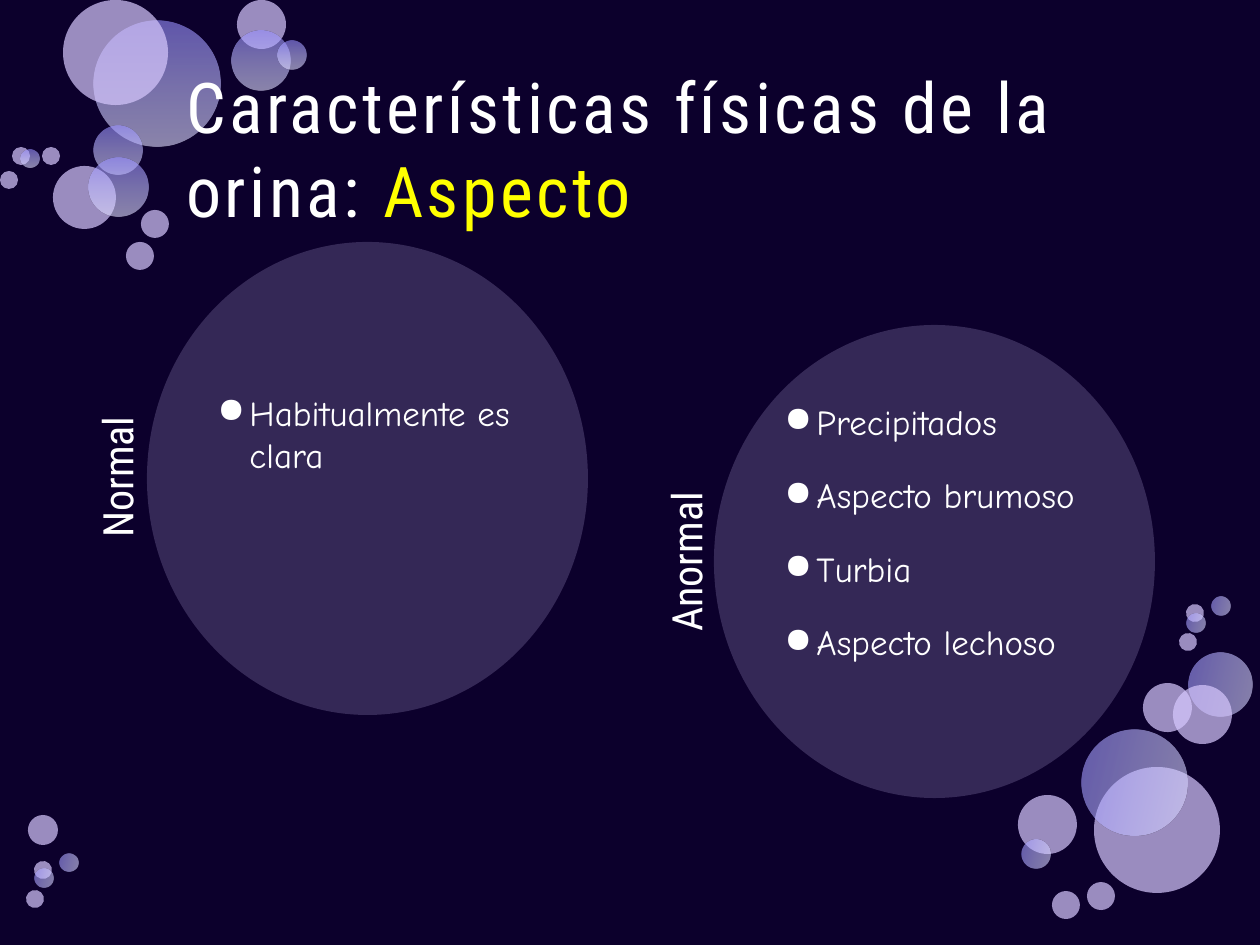
"""Build the slide on the physical aspect of urine, with bubbles in the corners."""
import lxml.etree
import pptx
import pptx.dml.color
import pptx.enum.shapes
import pptx.enum.text
import pptx.oxml.ns
import pptx.util

PX = pptx.util.Inches(1) / 126
COLORS = {
    "night": "0C002C",
    "lilac": "D7C8FE",
    "white": "FFFFFF",
    "yellow": "FFFF00",
}
GRADIENT = [(0, "9890FF"), (50, "BFBBFF"), (100, "E0DEFF")]
HEADING, BODY = "Roboto Condensed", "Comic Neue"
TOP_BUBBLES = [
    (94, 21, 126, True), (53, 166, 63, False), (94, 126, 49, True),
    (89, 158, 59, True), (63, 0, 105, False), (237, 0, 49, False),
    (231, 31, 59, True), (278, 41, 28, True), (141, 210, 28, False),
    (12, 147, 18, False), (126, 242, 28, False), (0, 171, 18, False),
    (21, 150, 18, True), (42, 147, 18, False),
]
BOTTOM_BUBBLES = [
    (1094, 767, 126, False), (1189, 653, 63, True), (1143, 683, 49, False),
    (1173, 685, 59, False), (1082, 730, 105, True), (28, 815, 30, False),
    (1018, 795, 59, False), (1022, 840, 28, True), (1052, 891, 28, False),
    (1186, 604, 18, False), (1087, 882, 28, False), (1212, 597, 18, True),
    (1187, 614, 18, True), (1179, 633, 18, False), (34, 861, 18, False),
    (60, 854, 18, True), (35, 869, 18, True), (26, 890, 18, False),
]


def emu(px):
    return round(px * PX)


def rgb(name):
    return pptx.dml.color.RGBColor.from_string(COLORS[name])


def add_child(parent, tag, **attrs):
    return lxml.etree.SubElement(parent, pptx.oxml.ns.qn(tag), attrs)


def add_alpha(color, percent):
    add_child(color, "a:alpha", val=str(percent * 1000))


def fill_gradient(sp):
    sp.fill.gradient()
    sp.fill.gradient_angle = 270
    stops = sp.element.spPr.find(".//" + pptx.oxml.ns.qn("a:gsLst"))
    for stop in list(stops):
        stops.remove(stop)
    for pos, color in GRADIENT:
        stop = add_child(stops, "a:gs", pos=str(pos * 1000))
        add_alpha(add_child(stop, "a:srgbClr", val=color), 60)


def fill_lilac(sp, percent):
    sp.fill.solid()
    sp.fill.fore_color.rgb = rgb("lilac")
    add_alpha(sp.element.spPr.find(".//" + pptx.oxml.ns.qn("a:srgbClr")), percent)


def add_ellipse(slide, x, y, w, h):
    oval = pptx.enum.shapes.MSO_SHAPE.OVAL
    sp = slide.shapes.add_shape(oval, emu(x), emu(y), emu(w), emu(h))
    sp.shadow.inherit = False
    sp.line.fill.background()
    return sp


def add_bubbles(slide, bubbles, turned):
    for x, y, size, shaded in bubbles:
        sp = add_ellipse(slide, x, y, size, size)
        if shaded:
            fill_gradient(sp)
        else:
            fill_lilac(sp, 70)
        if turned:
            sp.rotation = 103.3
            sp.element.spPr.xfrm.set("flipV", "1")


def add_run(p, text, font, size, color="white"):
    r = p.add_run()
    r.text = text
    r.font.name = font
    r.font.size = pptx.util.Pt(size)
    r.font.color.rgb = rgb(color)
    return r


def add_text_box(slide, x, y, w, h):
    sp = slide.shapes.add_textbox(emu(x), emu(y), emu(w), emu(h))
    tf = sp.text_frame
    tf.word_wrap = True
    tf.vertical_anchor = pptx.enum.text.MSO_ANCHOR.MIDDLE
    return sp


def add_title(slide):
    p = add_text_box(slide, 174, 55, 983, 185).text_frame.paragraphs[0]
    for text, color in [("Características físicas de la orina: ", "white"),
                        ("Aspecto", "yellow")]:
        r = add_run(p, text, HEADING, 40, color)
        r.font.element.set("spc", "200") if hasattr(r.font, "element") else \
            p.runs[-1]._r.get_or_add_rPr().set("spc", "200")


def add_side_label(slide, x, y, text):
    sp = add_text_box(slide, x, y, 473, 88)
    sp.rotation = 270
    p = sp.text_frame.paragraphs[0]
    p.alignment = pptx.enum.text.PP_ALIGN.CENTER
    add_run(p, text, HEADING, 24)


def add_list_circle(slide, x, y, items, top_inset):
    sp = add_ellipse(slide, x, y, 441, 473)
    fill_lilac(sp, 20)
    tf = sp.text_frame
    tf.word_wrap = True
    tf.vertical_anchor = pptx.enum.text.MSO_ANCHOR.TOP
    tf.margin_left = tf.margin_right = tf.margin_bottom = emu(6)
    tf.margin_top = emu(top_inset)
    for i, item in enumerate(items):
        p = tf.add_paragraph() if i else tf.paragraphs[0]
        p.alignment = pptx.enum.text.PP_ALIGN.LEFT
        p.space_before = pptx.util.Pt(18 if i else 0)
        pPr = p._p.get_or_add_pPr()
        indent = emu(32)
        pPr.set("marL", str(indent))
        pPr.set("indent", str(-indent))
        add_child(pPr, "a:buChar", char="●")
        add_run(p, item, BODY, 20)


def main():
    prs = pptx.Presentation()
    prs.slide_width, prs.slide_height = emu(1260), emu(945)
    slide = prs.slides.add_slide(prs.slide_layouts[6])
    slide.background.fill.solid()
    slide.background.fill.fore_color.rgb = rgb("night")
    add_bubbles(slide, TOP_BUBBLES, turned=False)
    add_bubbles(slide, BOTTOM_BUBBLES, turned=True)
    add_title(slide)
    add_side_label(slide, -120, 433, "Normal")
    add_list_circle(slide, 147, 242, ["Habitualmente es clara"], 80)
    add_side_label(slide, 449, 518, "Anormal")
    add_list_circle(slide, 714, 325, ["Precipitados", "Aspecto brumoso",
                                      "Turbia", "Aspecto lechoso"], 6)
    prs.save("out.pptx")


if __name__ == "__main__":
    main()
